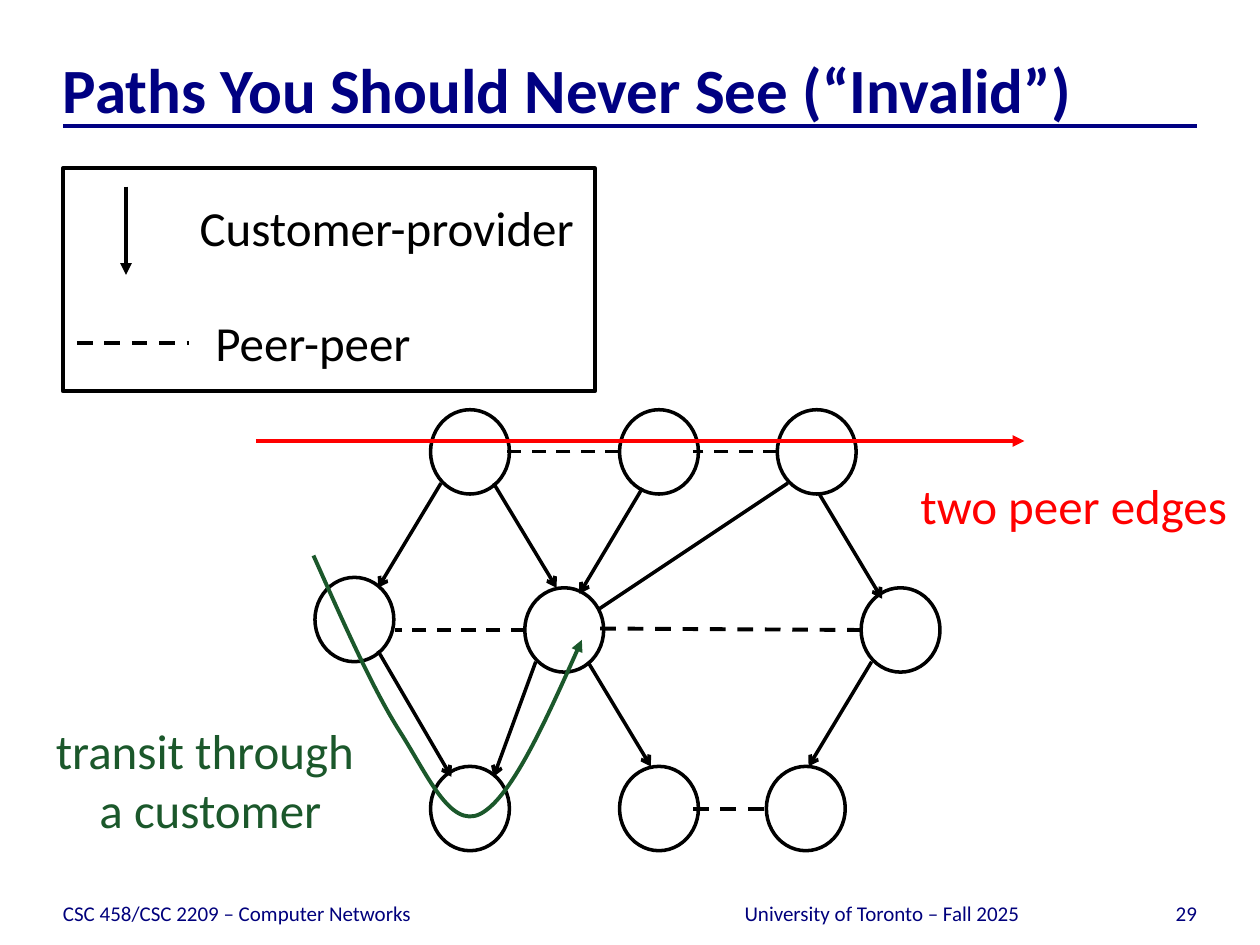
from lxml import etree
from pptx import Presentation
from pptx import util as u
from pptx.dml.color import RGBColor
from pptx.enum import dml, shapes, text
from pptx.oxml import ns

BLACK = RGBColor(0x00, 0x00, 0x00)
NAVY = RGBColor(0x00, 0x00, 0x82)
FOOTER_BLUE = RGBColor(0x00, 0x00, 0x7C)
RED = RGBColor(0xFF, 0x00, 0x00)
GREEN = RGBColor(0x1B, 0x58, 0x2B)

LEFT, CENTER, RIGHT = text.PP_ALIGN.LEFT, text.PP_ALIGN.CENTER, text.PP_ALIGN.RIGHT
NODE_WIDTH, NODE_HEIGHT = 1.59, 1.7
NODE_ROWS = {
    8.26: [8.68, 12.49, 15.67],
    11.64: [6.35],
    11.85: [10.58, 17.36],
    15.45: [8.68, 12.49, 15.45],
}
CUSTOMER_EDGES = [
    (8.89, 9.74, 7.62, 11.85),
    (9.95, 9.74, 11.22, 11.85),
    (12.95, 9.84, 11.68, 11.97),
    (16.51, 9.95, 17.78, 12.07),
    (7.62, 13.12, 9.1, 15.66),
    (10.8, 13.34, 9.95, 15.66),
    (11.85, 13.34, 13.12, 15.45),
    (17.57, 13.34, 16.3, 15.45),
]
PEER_EDGES = [
    (12.49, 9.1, 10.16, 9.1, 2),
    (15.67, 9.1, 13.97, 9.1, 2),
    (10.58, 12.7, 7.97, 12.7, 2),
    (12.1, 12.67, 17.36, 12.7, 2.25),
    (13.97, 16.3, 15.45, 16.3, 2.25),
]
TRANSIT_CURVE = [
    (6.32, 11.2),
    (6.91, 12.52), (7.49, 13.84), (8.05, 14.73),
    (8.61, 15.6), (9.07, 16.71), (9.68, 16.41),
    (10.29, 16.1), (11.02, 14.5), (11.73, 12.9),
]
FOOTERS = [
    ("CSC 458/CSC 2209 – Computer Networks", 1.27, 12.27, LEFT),
    ("University of Toronto – Fall 2025", 13.76, 8.04, CENTER),
    ("29", 22.02, 2.11, RIGHT),
]
LABELS = [
    ("Customer-provider", (3.73, 3.86, 8.13, 1.45), BLACK),
    ("Peer-peer", (4.06, 6.17, 4.5, 1.45), BLACK),
    ("two peer edges", (18.29, 9.47, 6.71, 1.45), RED),
    ("transit through\n a customer", (0.84, 14.4, 6.58, 2.62), GREEN),
]


class Painter:
    """Draws styled elements on the current slide, with lengths in centimetres."""

    font_name = "Calibri"

    def __init__(self, page):
        self.page = page

    def stroke(self, item, color, width, dashed=False, head=None):
        item.line.color.rgb = color
        item.line.width = u.Pt(width)
        if dashed:
            item.line.dash_style = dml.MSO_LINE.DASH
        if head:
            etree.SubElement(item.get_or_add_ln(), ns.qn("a:tailEnd"), type=head)

    def line(self, x1, y1, x2, y2, color=BLACK, width=2.0, **style):
        ends = map(u.Cm, (x1, y1, x2, y2))
        edge = self.page.shapes.add_connector(shapes.MSO_CONNECTOR.STRAIGHT, *ends)
        self.stroke(edge, color, width, **style)
        etree.SubElement(edge.element.spPr, ns.qn("a:effectLst"))

    def outline(self, kind, place, width):
        item = self.page.shapes.add_shape(kind, *map(u.Cm, place))
        item.shadow.inherit = False
        item.fill.background()
        self.stroke(item, BLACK, width)

    def curve(self, points, color, width, head):
        start, *rest = [(u.Cm(x), u.Cm(y)) for x, y in points]
        builder = self.page.shapes.build_freeform(*start)
        builder.add_line_segments(rest, close=False)
        item = builder.convert_to_shape()
        item.shadow.inherit = False
        item.fill.background()
        self.stroke(item, color, width, head=head)
        segments = item.element.xpath(".//a:lnTo")
        for first in range(0, len(segments), 3):
            bezier = etree.Element(ns.qn("a:cubicBezTo"))
            segments[first].addprevious(bezier)
            for segment in segments[first:first + 3]:
                bezier.append(segment[0])
                segment.getparent().remove(segment)

    def label(self, content, place, color, size, align, bold=False, **frame_format):
        box = self.page.shapes.add_textbox(*map(u.Cm, place))
        frame = box.text_frame
        for name, value in frame_format.items():
            setattr(frame, name, value)
        font_format = {"name": self.font_name, "size": u.Pt(size), "bold": bold}
        for number, wording in enumerate(content.split("\n")):
            para = frame.add_paragraph() if number else frame.paragraphs[0]
            para.alignment = align
            span = para.add_run()
            span.text = wording
            span.font.color.rgb = color
            for name, value in font_format.items():
                setattr(span.font, name, value)


def main():
    deck = Presentation()
    deck.slide_width, deck.slide_height = u.Cm(25.4), u.Cm(19.05)
    painter = Painter(deck.slides.add_slide(deck.slide_layouts[6]))

    flush = {
        "word_wrap": True,
        "vertical_anchor": text.MSO_ANCHOR.BOTTOM,
        "margin_left": 0,
        "margin_right": 0,
        "margin_bottom": 0,
    }
    fitted = {"word_wrap": False, "auto_size": text.MSO_AUTO_SIZE.SHAPE_TO_FIT_TEXT}

    painter.line(1.27, 2.54, 24.13, 2.54, NAVY, 2.25)
    painter.label("Paths You Should Never See (“Invalid”)", (1.27, 0.84, 22.86, 1.7),
                  NAVY, 36, LEFT, bold=True, **flush)
    for wording, left, width, align in FOOTERS:
        painter.label(wording, (left, 17.65, width, 1.02), FOOTER_BLUE, 12, align,
                      margin_top=0, **flush)

    for top, lefts in NODE_ROWS.items():
        for left in lefts:
            painter.outline(shapes.MSO_SHAPE.OVAL, (left, top, NODE_WIDTH, NODE_HEIGHT), 2)
    for edge in CUSTOMER_EDGES:
        painter.line(*edge, head="arrow")
    painter.line(15.88, 9.74, 12.07, 12.28)
    for *ends, width in PEER_EDGES:
        painter.line(*ends, width=width, dashed=True)

    painter.outline(shapes.MSO_SHAPE.RECTANGLE, (1.27, 3.39, 10.72, 4.5), 2.25)
    painter.line(2.54, 3.76, 2.54, 5.54, width=2.25, head="triangle")
    painter.line(1.55, 6.92, 3.81, 6.92, width=2.25, dashed=True)

    painter.line(5.16, 8.89, 20.65, 8.89, RED, 2.25, head="triangle")
    painter.curve(TRANSIT_CURVE, GREEN, 2.25, "triangle")
    for wording, place, color in LABELS:
        painter.label(wording, place, color, 28, CENTER, **fitted)

    deck.save("out.pptx")


if __name__ == "__main__":
    main()
